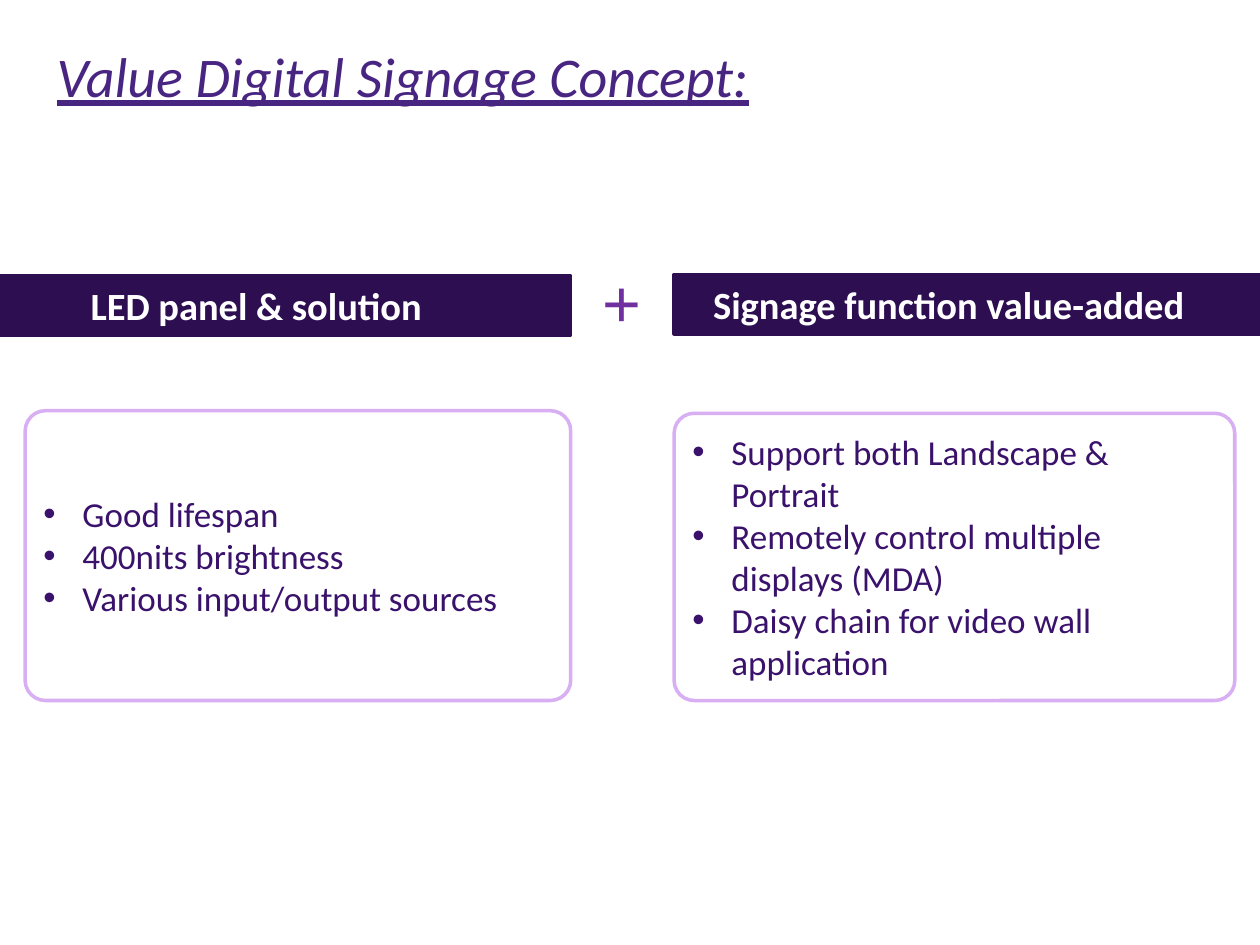
import pptx
import pptx.dml.color
import pptx.enum.shapes
import pptx.enum.text
import pptx.oxml.ns
import pptx.util
from lxml import etree

WIDTH, HEIGHT = pptx.util.Inches(10), pptx.util.Inches(7.5)
COLUMNS, ROWS = 100, 75
INDENT = pptx.util.Inches(0.31)
ANCHOR = pptx.enum.text.MSO_ANCHOR
SHAPE = pptx.enum.shapes.MSO_SHAPE

DARK, LILAC, WHITE = "2C0E51", "D9AFF3", "FFFFFF"
TITLE_COLOR, BODY_COLOR, PLUS_COLOR = "492582", "3A126C", "7030A0"

HEADERS = [
    ("LED panel & solution", (-0.4, 21.9, 45.7, 4.7), 7.6),
    ("Signage function value-added", (53.5, 21.8, 46.5, 4.7), 3.1),
]
CARDS = [
    (["Good lifespan", "400nits brightness", "Various input/output sources"],
     (2, 32.6, 43.3, 23)),
    (["Support both Landscape & Portrait",
      "Remotely control multiple displays (MDA)",
      "Daisy chain for video wall application"],
     (53.5, 32.8, 44.5, 22.8)),
]


def color(value):
    """Turn a hex string into a colour."""
    return pptx.dml.color.RGBColor.from_string(value)


def place(column, row, columns, rows):
    """Turn grid units into left, top, width and height."""
    across, down = WIDTH / COLUMNS, HEIGHT / ROWS
    return (round(column * across), round(row * down),
            round(columns * across), round(rows * down))


def add_bullet(paragraph):
    """Give a paragraph a round bullet with a hanging indent."""
    properties = paragraph._p.get_or_add_pPr()
    properties.set("marL", str(int(INDENT)))
    properties.set("indent", str(-int(INDENT)))
    qualify = pptx.oxml.ns.qn
    etree.SubElement(properties, qualify("a:buFont"), typeface="Arial")
    etree.SubElement(properties, qualify("a:buChar"), char="•")


def write(shape, *lines, size, fill, font="Calibri", bold=False, italic=False,
          underline=False, bullets=False, anchor=ANCHOR.TOP):
    """Write formatted, left-aligned lines into a shape."""
    frame = shape.text_frame
    frame.word_wrap = True
    frame.auto_size = pptx.enum.text.MSO_AUTO_SIZE.NONE
    frame.vertical_anchor = anchor
    frame.text = "\n".join(lines)
    for paragraph in frame.paragraphs:
        paragraph.alignment = pptx.enum.text.PP_ALIGN.LEFT
        if bullets:
            add_bullet(paragraph)
        for run in paragraph.runs:
            run.font.name = font
            run.font.size = pptx.util.Pt(size)
            run.font.bold = bold
            run.font.italic = italic
            run.font.underline = underline
            run.font.color.rgb = color(fill)


def add_box(slide, kind, area, fill, line):
    """Add a filled and outlined preset shape."""
    shape = slide.shapes.add_shape(kind, *place(*area))
    shape.shadow.inherit = False
    shape.fill.solid()
    shape.fill.fore_color.rgb = color(fill)
    shape.line.color.rgb = color(line)
    shape.line.width = pptx.util.Pt(2)
    return shape


def add_title(slide, text):
    """Move the title placeholder and fill it."""
    title = slide.shapes.title
    title.left, title.top, title.width, title.height = place(3.5, 2.8, 83.5, 6.6)
    write(title, text, size=32, fill=TITLE_COLOR, italic=True, underline=True)


def add_header(slide, text, area, margin):
    """Add a dark bar with its heading."""
    bar = add_box(slide, SHAPE.RECTANGLE, area, DARK, DARK)
    bar.text_frame.margin_left = round(margin * WIDTH / COLUMNS)
    write(bar, text, size=22, fill=WHITE, bold=True, anchor=ANCHOR.MIDDLE)


def add_card(slide, lines, area):
    """Add a rounded card with a bulleted list."""
    card = add_box(slide, SHAPE.ROUNDED_RECTANGLE, area, WHITE, LILAC)
    card.adjustments[0] = 0.07
    write(card, *lines, size=20, fill=BODY_COLOR, bullets=True,
          anchor=ANCHOR.MIDDLE)


def add_plus(slide):
    """Add the plus sign between the headers."""
    box = slide.shapes.add_textbox(*place(46.8, 20.2, 13.4, 7.4))
    write(box, "+", size=38, fill=PLUS_COLOR, font="Arial")


def main():
    """Build and save the slide."""
    presentation = pptx.Presentation()
    presentation.slide_width, presentation.slide_height = WIDTH, HEIGHT
    slide = presentation.slides.add_slide(presentation.slide_layouts[5])
    add_title(slide, "Value Digital Signage Concept:")
    for header in HEADERS:
        add_header(slide, *header)
    add_plus(slide)
    for card in CARDS:
        add_card(slide, *card)
    presentation.save("out.pptx")


if __name__ == "__main__":
    main()
